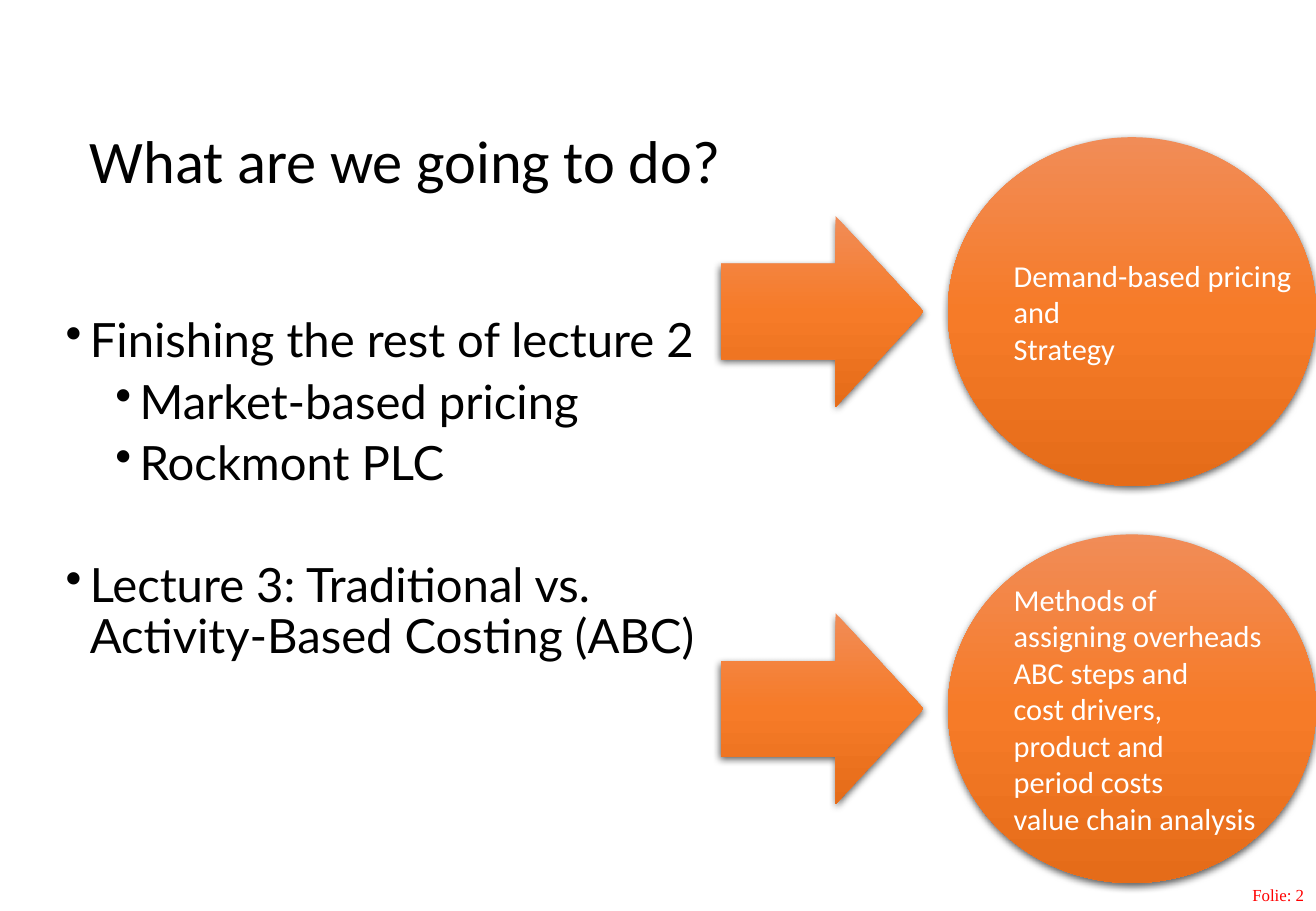
from pptx import Presentation
from pptx.dml.color import RGBColor
from pptx.enum.shapes import MSO_SHAPE as Shape
from pptx.enum.text import MSO_ANCHOR as Anchor, PP_ALIGN as Align
from pptx.oxml import parse_xml
from pptx.oxml.ns import nsdecls
from pptx.util import Inches, Pt

# Content: agenda lines are (text, level, space before in points)
TITLE = "What are we going to do?"
AGENDA = [
    ("Finishing the rest of lecture 2", 0, 0),
    ("Market-based pricing", 1, 6),
    ("Rockmont PLC", 1, 6),
    ("Lecture 3: Traditional vs. Activity-Based Costing (ABC)", 0, 42),
]
TOPICS = [
    ["Demand-based pricing\vand \vStrategy"],
    ["Methods of\vassigning overheads",
     "ABC steps and\vcost drivers,\vproduct and\vperiod costs\vvalue chain analysis"],
]
FOOTER = "Folie: 2"

COLORS = {"text": "000000", "light": "FFFFFF", "footer": "FF0000", "shadow": "000000",
          "top": "F18C57", "middle": "F67B28", "bottom": "E56C19"}

# Grid in inches: columns are (left, width), topic rows repeat at a fixed pitch
WIDTH, HEIGHT = 10.83, 7.5
COLUMNS = {"agenda": (0.5, 5.43), "arrow": (5.93, 1.67), "circle": (7.8, 3.03)}
ROW_TOP, ROW_HEIGHT, ROW_PITCH = 1.13, 2.87, 3.27
ARROW_HEIGHT = 1.57
LEVEL_INDENTS, HANGING = [0.2, 0.61], 0.2

presentation = Presentation()
presentation.slide_width, presentation.slide_height = Inches(WIDTH), Inches(HEIGHT)
slide = presentation.slides.add_slide(presentation.slide_layouts[6])


def write(frame, lines, font, size, color, align=Align.LEFT, anchor=Anchor.TOP,
          spacing=None, inset=None, wrap=True, bullets=False):
    """Fill a text frame with (text, level, space before) lines."""
    frame.word_wrap, frame.vertical_anchor = wrap, anchor
    if inset is not None:
        frame.margin_left = frame.margin_right = Inches(inset)
        frame.margin_top = frame.margin_bottom = Inches(inset)
    for index, (text, level, before) in enumerate(lines):
        paragraph = frame.add_paragraph() if index else frame.paragraphs[0]
        paragraph.text, paragraph.level = text, level
        paragraph.alignment, paragraph.space_before = align, Pt(before)
        if spacing:
            paragraph.line_spacing = spacing
        if bullets:
            properties = paragraph._p.get_or_add_pPr()
            properties.set("marL", str(Inches(LEVEL_INDENTS[level])))
            properties.set("indent", str(-Inches(HANGING)))
            properties.append(parse_xml(f'<a:buChar {nsdecls("a")} char="•"/>'))
        for run in paragraph.runs:
            run.font.name, run.font.size = font, Pt(size)
            run.font.color.rgb = RGBColor.from_string(COLORS[color])


def add_text(left, top, width, height, lines, **style):
    box = slide.shapes.add_textbox(*map(Inches, (left, top, width, height)))
    write(box.text_frame, lines, **style)


def add_glossy(kind, column, top, height):
    """Add a shape with the orange gradient and a soft shadow below it."""
    left, width = COLUMNS[column]
    shape = slide.shapes.add_shape(kind, *map(Inches, (left, top, width, height)))
    shape.line.fill.background()
    stops = "".join(f'<a:gs pos="{position * 1000}"><a:srgbClr val="{COLORS[name]}"/></a:gs>'
                    for position, name in [(0, "top"), (50, "middle"), (100, "bottom")])
    outline = shape.line._get_or_add_ln()
    outline.addprevious(parse_xml(
        f'<a:gradFill {nsdecls("a")} rotWithShape="1"><a:gsLst>{stops}</a:gsLst>'
        '<a:lin ang="5400000" scaled="0"/></a:gradFill>'))
    outline.addnext(parse_xml(
        f'<a:effectLst {nsdecls("a")}><a:outerShdw blurRad="{Pt(4.5)}" dist="{Pt(1.5)}" '
        f'dir="5400000" rotWithShape="0"><a:srgbClr val="{COLORS["shadow"]}">'
        '<a:alpha val="63000"/></a:srgbClr></a:outerShdw></a:effectLst>'))
    return shape


# Footer, title and agenda
add_text(7.31, 7.23, 3.52, 0.27, [(FOOTER, 0, 0)], font="Times New Roman", size=10,
         color="footer", align=Align.RIGHT)
add_text(0.64, 0.72, 9.75, 1.25, [(TITLE, 0, 0)], font="Calibri", size=35.8,
         color="text", anchor=Anchor.MIDDLE, spacing=0.9)
agenda_left, agenda_width = COLUMNS["agenda"]
add_text(agenda_left, 2.57, agenda_width, 4.31, AGENDA, font="Lato", size=28,
         color="text", spacing=0.9, inset=0.04, bullets=True)

# Topic rows: a circle with an arrow centred beside it
for row, topic in enumerate(TOPICS):
    top = ROW_TOP + row * ROW_PITCH
    circle = add_glossy(Shape.OVAL, "circle", top, ROW_HEIGHT)
    write(circle.text_frame, [(text, 0, 0) for text in topic], font="Calibri", size=18,
          color="light", anchor=Anchor.MIDDLE, wrap=False)
    arrow = add_glossy(Shape.RIGHT_ARROW, "arrow",
                       top + (ROW_HEIGHT - ARROW_HEIGHT) / 2, ARROW_HEIGHT)
    arrow.adjustments[0], arrow.adjustments[1] = 0.5, 0.46

presentation.save("out.pptx")
